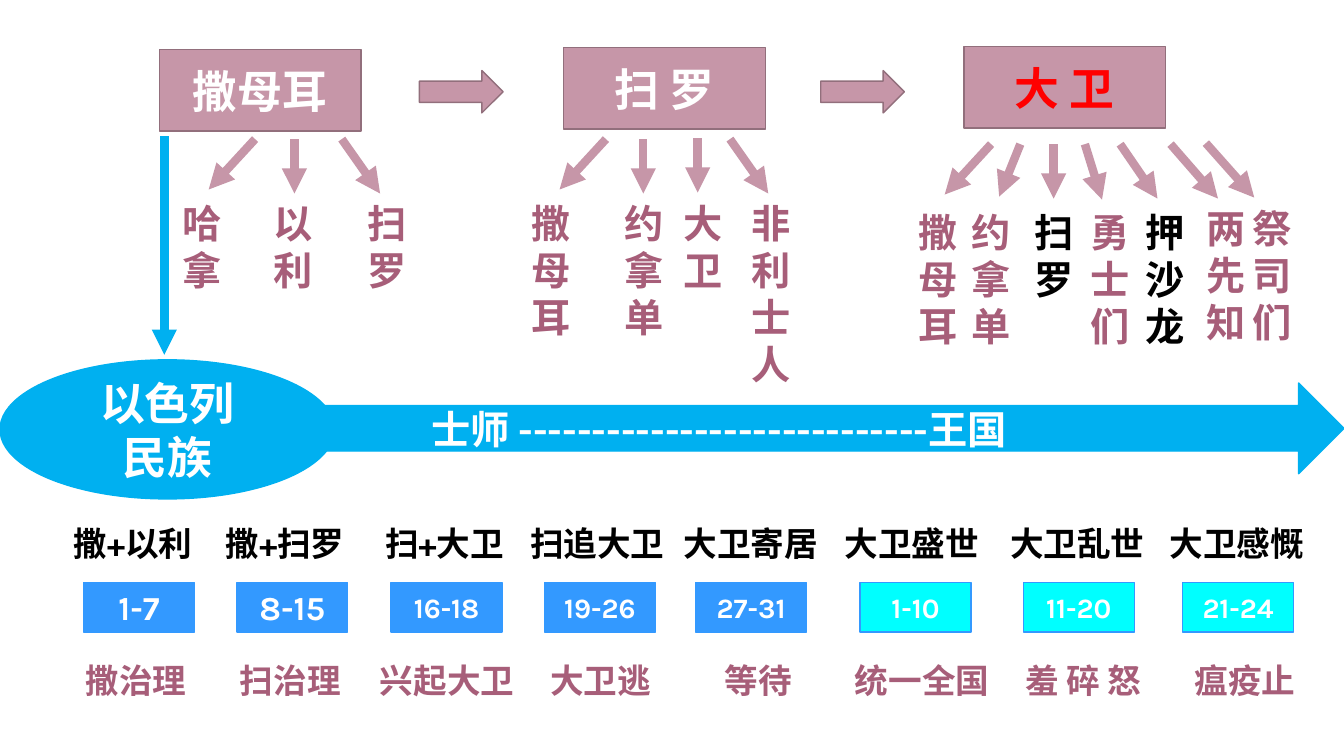
import pptx
import pptx.util
import pptx.dml.color
import pptx.enum.shapes
import pptx.enum.text
from lxml import etree
from pptx.oxml.ns import qn

Inches, Pt = pptx.util.Inches, pptx.util.Pt
RGB = pptx.dml.color.RGBColor.from_string
SHAPE = pptx.enum.shapes.MSO_SHAPE
ALIGN = pptx.enum.text.PP_ALIGN
MIDDLE = pptx.enum.text.MSO_ANCHOR.MIDDLE

COLORS = {
    "pink": "C696A8", "edge": "926F7C", "rose": "A75E79", "sky": "00B0F0",
    "blue": "3399FF", "cyan": "00FFFF", "white": "FFFFFF", "black": "000000",
    "red": "FF0000",
}

prs = pptx.Presentation()
prs.slide_width, prs.slide_height = Inches(13.33), Inches(7.5)
s = prs.slides.add_slide(prs.slide_layouts[6])


def add_text(box, text, size, color, align=ALIGN.LEFT):
    tf = box.text_frame
    tf.word_wrap = True
    tf.text = text
    for p in tf.paragraphs:
        p.alignment = align
        p.font.name = "Karla"
        p.font.size = Pt(size)
        p.font.bold = True
        p.font.color.rgb = RGB(COLORS[color])


def add_block(kind, x, y, w, h, fill, line):
    sp = s.shapes.add_shape(kind, Inches(x), Inches(y), Inches(w), Inches(h))
    sp.shadow.inherit = False
    sp.fill.solid()
    sp.fill.fore_color.rgb = RGB(COLORS[fill])
    sp.line.color.rgb = RGB(COLORS[line])
    sp.line.width = Pt(1)
    sp.text_frame.vertical_anchor = MIDDLE
    return sp


for x in (4.16, 8.14):
    add_block(SHAPE.RIGHT_ARROW, x, 0.7, 0.83, 0.42, "pink", "edge")

leaders = [
    ("撒母耳", 1.58, 0.49, "white"),
    ("扫 罗", 5.59, 0.47, "white"),
    ("大 卫", 9.56, 0.46, "red"),
]
for name, x, y, color in leaders:
    sp = add_block(SHAPE.RECTANGLE, x, y, 2, 0.81, "pink", "edge")
    add_text(sp, name, 32, color, ALIGN.CENTER)

arrows = [
    (2.53, 1.38, 2.07, 1.88, "pink"),
    (2.92, 1.38, 2.92, 1.92, "pink"),
    (3.39, 1.38, 3.77, 1.92, "pink"),
    (6.01, 1.38, 5.55, 1.88, "pink"),
    (6.38, 1.38, 6.38, 1.92, "pink"),
    (6.92, 1.37, 6.92, 1.91, "pink"),
    (7.24, 1.38, 7.62, 1.92, "pink"),
    (9.83, 1.43, 9.37, 1.93, "pink"),
    (10.12, 1.43, 9.91, 1.95, "pink"),
    (10.45, 1.43, 10.45, 1.97, "pink"),
    (10.76, 1.43, 10.93, 1.98, "pink"),
    (11.11, 1.43, 11.48, 1.97, "pink"),
    (11.61, 1.43, 12.08, 1.97, "pink"),
    (11.96, 1.42, 12.44, 1.96, "pink"),
    (1.63, 1.35, 1.63, 3.52, "sky"),
]
for x1, y1, x2, y2, color in arrows:
    c = s.shapes.add_connector(pptx.enum.shapes.MSO_CONNECTOR.STRAIGHT,
                               Inches(x1), Inches(y1), Inches(x2), Inches(y2))
    c.line.color.rgb = RGB(COLORS[color])
    c.line.width = Pt(6)
    etree.SubElement(c.line._get_or_add_ln(), qn("a:tailEnd"), type="triangle")
    etree.SubElement(c._element.spPr, qn("a:effectLst"))

people = [
    ("哈\n拿", 1.71, 1.93, "rose"),
    ("以利", 2.61, 1.93, "rose"),
    ("扫罗", 3.55, 1.93, "rose"),
    ("撒母耳", 5.17, 1.93, "rose"),
    ("约拿单", 6.1, 1.93, "rose"),
    ("大卫", 6.68, 1.93, "rose"),
    ("非利士人", 7.36, 1.93, "rose"),
    ("撒母耳", 9.01, 2.02, "rose"),
    ("约拿单", 9.54, 2.02, "rose"),
    ("扫罗", 10.16, 2.02, "black"),
    ("勇士们", 10.72, 2.02, "rose"),
    ("押沙龙", 11.26, 2.02, "black"),
    ("两先知", 11.87, 1.98, "rose"),
    ("祭司们", 12.32, 1.98, "rose"),
]
for name, x, y, color in people:
    h = 0.1 + 0.47 * len(name.replace("\n", ""))
    tb = s.shapes.add_textbox(Inches(x), Inches(y), Inches(0.58), Inches(h))
    add_text(tb, name, 28, color)

nation = add_block(SHAPE.OVAL, 0, 3.57, 3.32, 1.38, "sky", "sky")
add_text(nation, "以色列\n民族", 32, "white", ALIGN.CENTER)

timeline = add_block(SHAPE.RIGHT_ARROW, 3.21, 3.8, 10.12, 0.9, "sky", "sky")
add_text(timeline, "士师 " + "-" * 28 + "王国", 28, "white")
timeline.text_frame.margin_left = Inches(1.07)

periods = [
    ("撒+以利", 0.63, "1-7", 0.83, 24, "blue", "撒治理", 0.75),
    ("撒+扫罗", 2.14, "8-15", 2.35, 24, "blue", "扫治理", 2.28),
    ("扫+大卫", 3.72, "16-18", 3.88, 20, "blue", "兴起大卫", 3.67),
    ("扫追大卫", 5.16, "19-26", 5.4, 20, "blue", "大卫逃", 5.36),
    ("大卫寄居", 6.68, "27-31", 6.9, 20, "blue", "等待", 7.09),
    ("大卫盛世", 8.28, "1-10", 8.53, 20, "cyan", "统一全国", 8.38),
    ("大卫乱世", 9.92, "11-20", 10.15, 20, "cyan", "羞 碎 怒", 10.07),
    ("大卫感慨", 11.5, "21-24", 11.73, 20, "cyan", "瘟疫止", 11.75),
]
for title, title_x, chapters, x, size, fill, event, event_x in periods:
    sp = add_block(SHAPE.RECTANGLE, x, 5.78, 1.1, 0.49, fill, "blue")
    add_text(sp, chapters, size, "white", ALIGN.CENTER)
    for text, left, top, color in ((title, title_x, 5.14, "black"),
                                   (event, event_x, 6.5, "rose")):
        tb = s.shapes.add_textbox(Inches(left), Inches(top), Inches(1.58), Inches(0.5))
        add_text(tb, text, 24, color)

prs.save("out.pptx")
